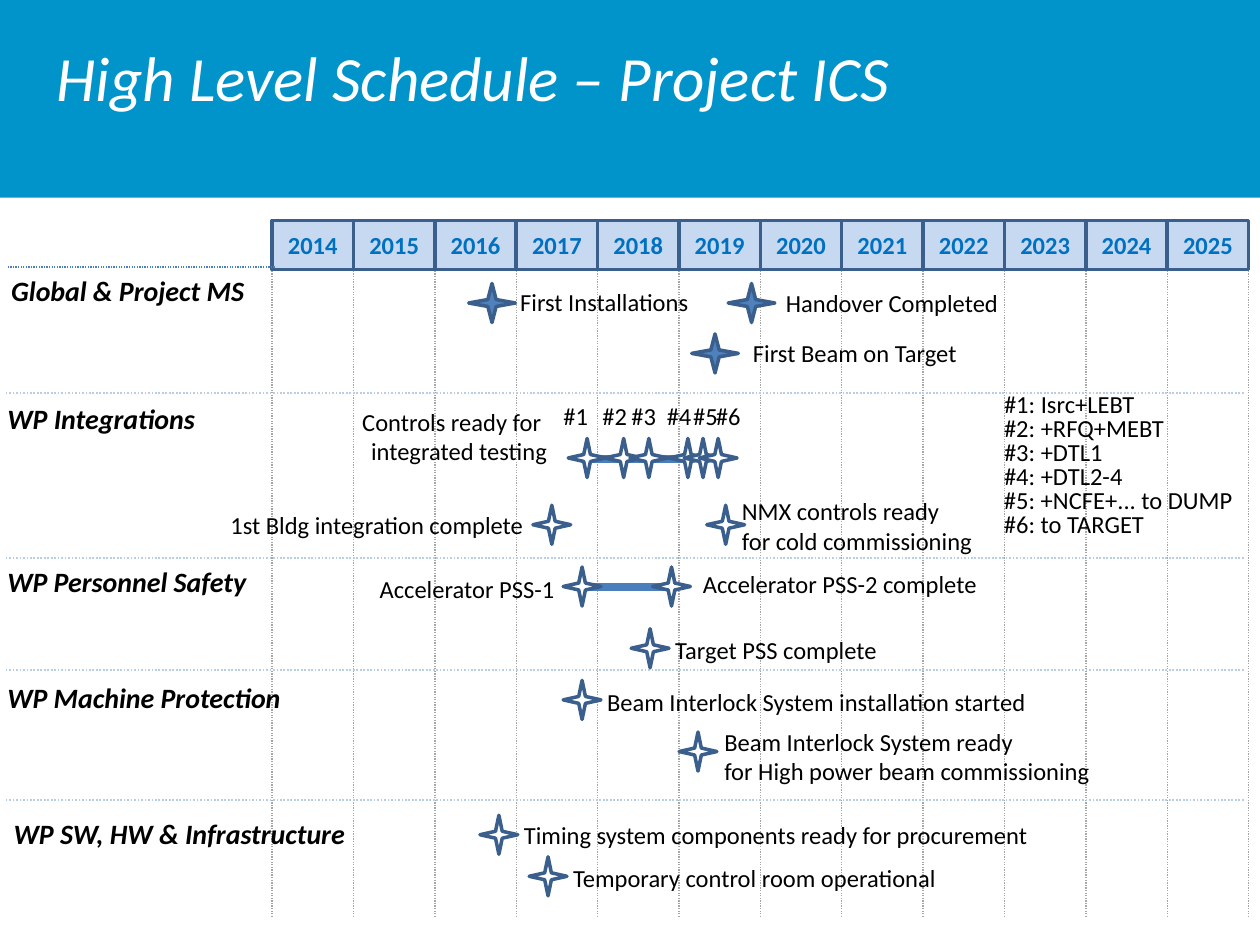
from pptx import Presentation
from pptx import util as u
from pptx.dml.color import RGBColor
from pptx.enum import dml, shapes, text
from pptx.oxml.ns import qn
from lxml import etree

COLOURS = {
    "band": "0094CA", "white": "FFFFFF", "black": "000000", "year": "0070C0",
    "year_fill": "C6D9F1", "star": "4F81BD", "outline": "3A5F8C",
    "bar": "4B7EBC", "grid": "A6A6A6", "divider": "B9CDE5",
}
LABEL = {"name": "Calibri", "size": u.Pt(14)}
HEADING = {"name": "Calibri", "size": u.Pt(16), "bold": True, "italic": True}
YEAR = {"name": "Calibri", "size": u.Pt(14), "bold": True}
TITLE = {"name": "Calibri", "size": u.Pt(36), "bold": False, "italic": True}
LEFT, CENTER, RIGHT = (text.PP_ALIGN.LEFT, text.PP_ALIGN.CENTER,
                       text.PP_ALIGN.RIGHT)

YEARS = range(2014, 2026)
GRID_LEFT, GRID_RIGHT = 2.16, 9.91
PITCH = (GRID_RIGHT - GRID_LEFT) / len(YEARS)
YEAR_TOP, YEAR_HEIGHT = 1.75, 0.39

DIVIDERS = [3.12, 4.43, 5.32, 6.35]
WORK_PACKAGES = [
    ("Global & Project MS", -0.01, 2.12, 2.08),
    ("WP Integrations", -0.04, 3.14, 1.71),
    ("WP Personnel Safety", -0.04, 4.43, 2.13),
    ("WP Machine Protection", -0.04, 5.35, 2.4),
    ("WP SW, HW & Infrastructure", 0.01, 6.43, 2.87),
]
PROJECT_STARS = [(3.72, 2.25), (5.78, 2.25), (5.49, 2.65)]
BARS = [(4.61, 5.41, 3.64), (4.57, 5.37, 4.66)]
# Integration steps: star left, label left
STEPS = [(4.51, 4.37), (4.8, 4.68), (5, 4.91), (5.31, 5.19), (5.43, 5.4),
         (5.55, 5.58)]
PACKAGE_STARS = [(4.23, 4.01), (5.61, 4.01), (4.47, 4.5), (5.18, 4.5),
                 (5.01, 4.99), (4.47, 5.4), (5.39, 5.81), (3.81, 6.47),
                 (4.2, 6.8)]
MILESTONES = [
    ("First Installations", 4.03, 2.23, 1.6, LEFT),
    ("Handover Completed", 6.13, 2.24, 1.9, CENTER),
    ("First Beam on Target", 5.87, 2.63, 1.83, CENTER),
    ("Controls ready for \nintegrated testing", 2.76, 3.18, 1.68, RIGHT),
    ("1st Bldg integration complete", 1.73, 4, 2.55, LEFT),
    ("NMX controls ready\nfor cold commissioning", 5.79, 3.89, 2.04, LEFT),
    ("Accelerator PSS-1", 2.9, 4.51, 1.6, RIGHT),
    ("Accelerator PSS-2 complete", 5.48, 4.47, 2.39, LEFT),
    ("Target PSS complete", 5.26, 4.99, 1.82, LEFT),
    ("Beam Interlock System installation started", 4.72, 5.4, 3.56, LEFT),
    ("Beam Interlock System ready\nfor High power beam commissioning",
     5.65, 5.72, 3.12, LEFT),
    ("Timing system components ready for procurement", 4.06, 6.46, 4.23, LEFT),
    ("Temporary control room operational", 4.45, 6.8, 3.17, LEFT),
]
LEGEND = [("#1: Isrc+LEBT", 1.25), ("#2: +RFQ+MEBT", 1.48),
          ("#3: +DTL1", 0.99), ("#4: +DTL2-4", 1.15),
          ("#5: +NCFE+... to DUMP", 2.03), ("#6: to TARGET", 1.37)]


def rgb(key):
    return RGBColor.from_string(COLOURS[key])


def inches(*lengths):
    return [u.Inches(v) for v in lengths]


def write(tf, words, fmt, colour="black", align=LEFT):
    """Fill a text frame, one paragraph for each line of words."""
    tf.text = words
    for p in tf.paragraphs:
        p.alignment = align
        for r in p.runs:
            for name, value in fmt.items():
                setattr(r.font, name, value)
            r.font.color.rgb = rgb(colour)


def add_label(s, words, x, y, w, align=LEFT, fmt=LABEL):
    h = 0.34 if fmt is LABEL else 0.37
    h += 0.23 * words.count("\n")
    tf = s.shapes.add_textbox(*inches(x, y, w, h)).text_frame
    tf.word_wrap = False
    tf.auto_size = text.MSO_AUTO_SIZE.SHAPE_TO_FIT_TEXT
    write(tf, words, fmt, align=align)


def add_box(s, kind, x, y, w, h, fill, outline=None):
    sp = s.shapes.add_shape(kind, *inches(x, y, w, h))
    sp.shadow.inherit = False
    sp.fill.solid()
    sp.fill.fore_color.rgb = rgb(fill)
    if outline:
        sp.line.color.rgb = rgb(outline)
        sp.line.width = u.Pt(2)
    else:
        sp.line.fill.background()
    return sp


def add_star(s, x, y, w=0.3, fill="white"):
    add_box(s, shapes.MSO_SHAPE.STAR_4_POINT, x, y, w, 0.31, fill, "outline")


def add_line(s, x1, y1, x2, y2, colour, width, dotted=True):
    line = s.shapes.add_connector(shapes.MSO_CONNECTOR.STRAIGHT,
                                  *inches(x1, y1, x2, y2))
    line.line.color.rgb = rgb(colour)
    line.line.width = u.Pt(width)
    if dotted:
        line.line.dash_style = dml.MSO_LINE.ROUND_DOT
    etree.SubElement(line._element.spPr, qn("a:effectLst"))


def add_title(s):
    """Place the title over a full-width band."""
    band = add_box(s, shapes.MSO_SHAPE.RECTANGLE, 0, 0, 10, 1.57, "band")
    s.shapes._spTree.insert(2, band._element)
    title = s.shapes.title
    title.left, title.top, title.width, title.height = inches(
        0.35, -0.02, 9, 1.25)
    title.text_frame.vertical_anchor = text.MSO_ANCHOR.MIDDLE
    write(title.text_frame, "High Level Schedule – Project ICS", TITLE, "white")


def add_calendar(s):
    """Draw the year boxes, the year lines and the work package dividers."""
    for i, year in enumerate(YEARS):
        sp = add_box(s, shapes.MSO_SHAPE.RECTANGLE, GRID_LEFT + i * PITCH,
                     YEAR_TOP, PITCH, YEAR_HEIGHT, "year_fill", "outline")
        sp.text_frame.vertical_anchor = text.MSO_ANCHOR.MIDDLE
        write(sp.text_frame, str(year), YEAR, "year", CENTER)
    for i in range(len(YEARS) + 1):
        x = GRID_LEFT + i * PITCH
        add_line(s, x, 2.15, x, 7.28, "grid", 0.75)
    add_line(s, 2.18, 2.12, 0.06, 2.12, "bar", 0.75)
    for y in DIVIDERS:
        add_line(s, 9.87, y, 0.04, y, "divider", 1)


def add_milestones(s):
    for x1, x2, y in BARS:
        add_line(s, x1, y, x2, y, "bar", 4.5, dotted=False)
    for x, y in PROJECT_STARS:
        add_star(s, x, y, 0.37, "star")
    for x, y in PACKAGE_STARS:
        add_star(s, x, y)
    for n, (star_x, label_x) in enumerate(STEPS, 1):
        add_star(s, star_x, 3.48)
        add_label(s, f"#{n}", label_x, 3.13, 0.4, CENTER)
    for milestone in MILESTONES:
        add_label(s, *milestone)


def main():
    prs = Presentation()
    prs.slide_width, prs.slide_height = inches(10, 7.5)
    s = prs.slides.add_slide(prs.slide_layouts[5])
    add_title(s)
    add_calendar(s)
    for package in WORK_PACKAGES:
        add_label(s, *package, fmt=HEADING)
    add_milestones(s)
    for i, (words, w) in enumerate(LEGEND):
        add_label(s, words, 7.87, 3.04 + 0.19 * i, w)
    prs.save("out.pptx")


if __name__ == "__main__":
    main()
